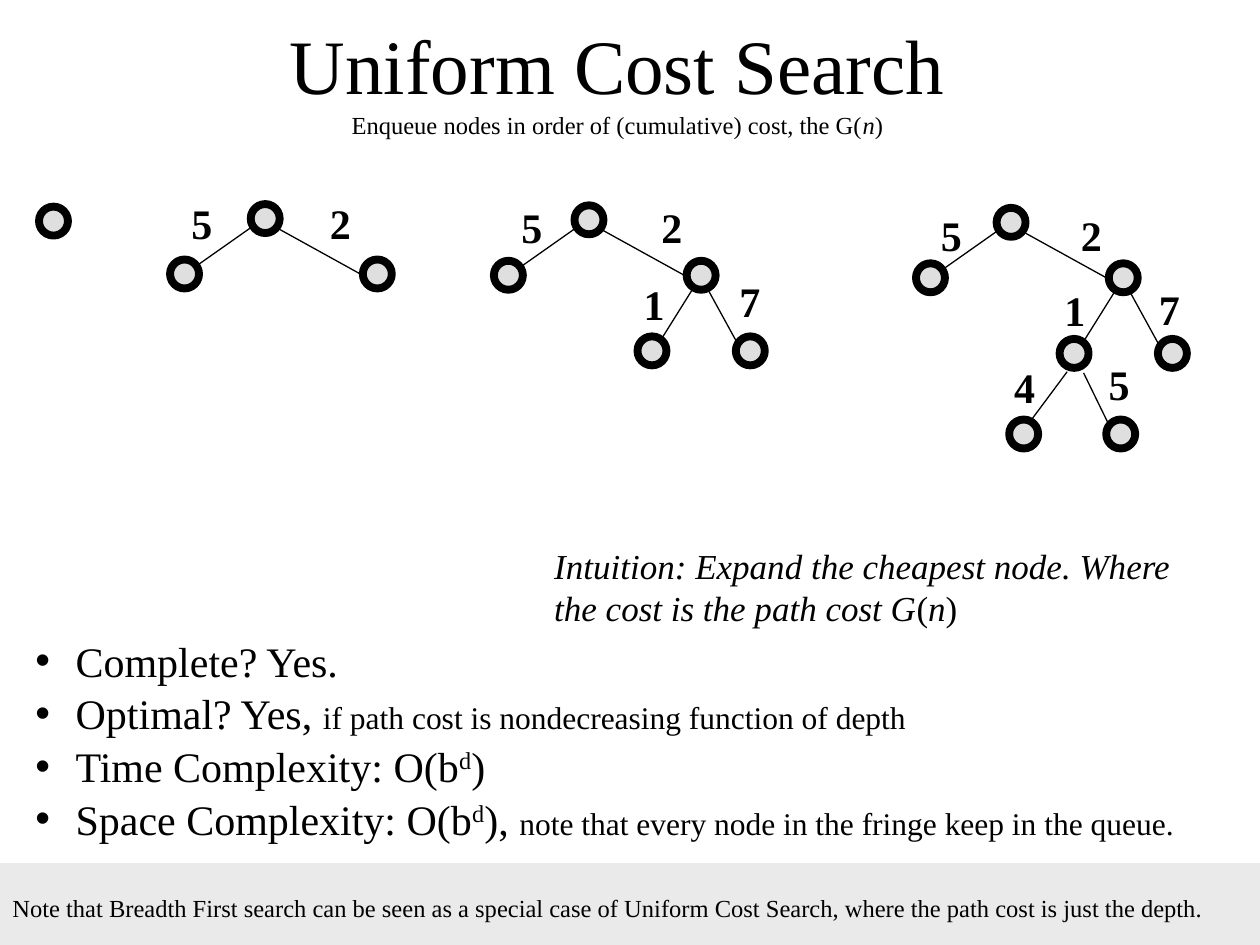
from dataclasses import dataclass

from lxml import etree
from pptx import Presentation
from pptx import util as u
from pptx.dml.color import RGBColor
from pptx.enum import shapes, text
from pptx.oxml.ns import qn


@dataclass(frozen=True)
class Theme:
    font: str = "Times New Roman"
    ink: RGBColor = RGBColor(0x00, 0x00, 0x00)
    node: RGBColor = RGBColor(0xC0, 0xC0, 0xC0)
    band: RGBColor = RGBColor(0xEA, 0xEA, 0xEA)
    title: int = 44
    body: int = 24
    intuition: int = 20
    detail: int = 18
    note: int = 14
    node_line: float = 4.5
    edge_line: float = 0.75


class SlideBuilder:
    """Holds the theme and the slide being filled."""

    def __init__(self, slide, theme):
        self.slide = slide
        self.theme = theme

    def place(self, shape, left, top, width, height):
        shape.left, shape.top = u.Inches(left), u.Inches(top)
        shape.width, shape.height = u.Inches(width), u.Inches(height)

    def style(self, font, size, bold=False, italic=False):
        font.name, font.size = self.theme.font, u.Pt(size)
        font.bold, font.italic = bold, italic
        font.color.rgb = self.theme.ink

    def run(self, paragraph, words, size, italic=False, raised=False):
        run = paragraph.add_run()
        run.text = words
        self.style(run.font, size, italic=italic)
        if raised:
            run._r.get_or_add_rPr().set("baseline", "30000")

    def title(self, heading, subtitle, box):
        shape = self.slide.shapes.title
        self.place(shape, *box)
        frame = shape.text_frame
        frame.auto_size = text.MSO_AUTO_SIZE.NONE
        frame.vertical_anchor = text.MSO_ANCHOR.MIDDLE
        paragraph = frame.paragraphs[0]
        paragraph.alignment = text.PP_ALIGN.CENTER
        self.run(paragraph, heading, self.theme.title)
        paragraph.add_line_break()
        for words, italic in subtitle:
            self.run(paragraph, words, self.theme.note, italic)

    def bullets(self, items, box):
        shape = self.slide.placeholders[1]
        self.place(shape, *box)
        frame = shape.text_frame
        frame.auto_size = text.MSO_AUTO_SIZE.NONE
        for index, item in enumerate(items):
            paragraph = frame.add_paragraph() if index else frame.paragraphs[0]
            paragraph.space_before = u.Pt(1.3)
            properties = paragraph._p.get_or_add_pPr()
            properties.set("marL", str(u.Inches(0.32)))
            properties.set("indent", str(u.Inches(-0.32)))
            etree.SubElement(properties, qn("a:buChar")).set("char", "•")
            for words, size, raised in item:
                self.run(paragraph, words, size, raised=raised)

    def textbox(self, box, wrap=True):
        shape = self.slide.shapes.add_textbox(*map(u.Inches, box))
        shape.text_frame.word_wrap = wrap
        return shape.text_frame

    def plain_text(self, words, box, size, bold=False, wrap=True):
        frame = self.textbox(box, wrap)
        paragraph = frame.paragraphs[0]
        paragraph.text = words
        self.style(paragraph.font, size, bold)
        return frame

    def mixed_text(self, parts, box, size):
        paragraph = self.textbox(box).paragraphs[0]
        for words, italic in parts:
            self.run(paragraph, words, size, italic)

    def filled_shape(self, kind, box, color):
        shape = self.slide.shapes.add_shape(kind, *map(u.Inches, box))
        shape.shadow.inherit = False
        shape.fill.solid()
        shape.fill.fore_color.rgb = color
        shape.line.fill.background()
        return shape

    def node(self, left, top):
        shape = self.filled_shape(
            shapes.MSO_SHAPE.OVAL, (left, top, 0.23, 0.23), self.theme.node)
        shape.line.color.rgb = self.theme.ink
        shape.line.width = u.Pt(self.theme.node_line)
        color = shape._element.spPr.find(qn("a:solidFill"))[0]
        etree.SubElement(color, qn("a:alpha")).set("val", "50000")

    def edge(self, *ends):
        line = self.slide.shapes.add_connector(
            shapes.MSO_CONNECTOR.STRAIGHT, *map(u.Inches, ends))
        line.line.color.rgb = self.theme.ink
        line.line.width = u.Pt(self.theme.edge_line)
        etree.SubElement(line._element.spPr, qn("a:effectLst"))

    def tree(self, left, top, depth, costs):
        """Draws the root, then one pair of children for each expansion."""
        self.node(left, top)
        for pair in EXPANSIONS[:depth]:
            for (x, y), (x1, y1, x2, y2) in pair:
                self.edge(left + x1, top + y1, left + x2, top + y2)
                self.node(left + x, top + y)
        for cost, x, y in costs:
            self.plain_text(cost, (x, y, 0.37, 0.5), self.theme.body,
                            bold=True, wrap=False)


# Child position and edge ends, measured from the root's top left corner
EXPANSIONS = [
    [((-0.64, 0.44), (0.01, 0.18, -0.43, 0.49)),
     ((0.89, 0.44), (0.21, 0.19, 0.88, 0.56))],
    [((0.5, 1.04), (0.94, 0.66, 0.69, 1.06)),
     ((1.28, 1.04), (1.06, 0.67, 1.29, 1.09))],
    [((0.1, 1.68), (0.56, 1.3, 0.27, 1.69)),
     ((0.87, 1.68), (0.69, 1.31, 0.89, 1.72))],
]

# Root position, number of expansions, and cost labels
TREES = [
    (0.31, 1.64, 0, []),
    (1.99, 1.62, 1, [("5", 1.42, 1.52), ("2", 2.52, 1.52)]),
    (4.56, 1.63, 2, [("5", 4.04, 1.55), ("2", 5.15, 1.55),
                     ("1", 5.01, 2.16), ("7", 5.77, 2.14)]),
    (7.91, 1.65, 3, [("5", 7.37, 1.61), ("2", 8.48, 1.61),
                     ("1", 8.35, 2.21), ("7", 9.1, 2.2),
                     ("4", 7.95, 2.82), ("5", 8.7, 2.8)]),
]


def main():
    presentation = Presentation()
    presentation.slide_width = u.Inches(10)
    presentation.slide_height = u.Inches(7.5)
    theme = Theme()
    slide = presentation.slides.add_slide(presentation.slide_layouts[1])
    builder = SlideBuilder(slide, theme)

    # Title and properties of the search
    builder.title(
        "Uniform Cost Search",
        [("Enqueue nodes in order of (cumulative) cost, the G(", False),
         ("n", True), (")", False)],
        (0.65, 0, 8.5, 1.25))
    large, small = theme.body, theme.detail
    builder.bullets([
        [("Complete? Yes.", large, False)],
        [("Optimal? Yes, ", large, False),
         ("if path cost is nondecreasing function of depth", small, False)],
        [("Time Complexity: O(b", large, False), ("d", large, True),
         (")", large, False)],
        [("Space Complexity: O(b", large, False), ("d", large, True),
         ("), ", large, False),
         ("note that every node in the fringe keep in the queue.", small, False)],
    ], (0.18, 4.99, 9.57, 1.7))

    # Intuition
    builder.mixed_text(
        [("Intuition: Expand the cheapest node. Where the cost is the path cost G",
          True), ("(", False), ("n", True), (")", False)],
        (4.3, 4.27, 5.31, 0.77), theme.intuition)

    # Search trees, one expansion further each time
    for tree in TREES:
        builder.tree(*tree)

    # Closing note on its band
    builder.filled_shape(shapes.MSO_SHAPE.RECTANGLE, (0, 6.85, 10, 0.65), theme.band)
    note = builder.plain_text(
        "Note that Breadth First search can be seen as a special case of "
        "Uniform Cost Search, where the path cost is just the depth.",
        (0, 6.88, 10.27, 0.65), theme.note)
    note.vertical_anchor = text.MSO_ANCHOR.MIDDLE

    presentation.save("out.pptx")


if __name__ == "__main__":
    main()
